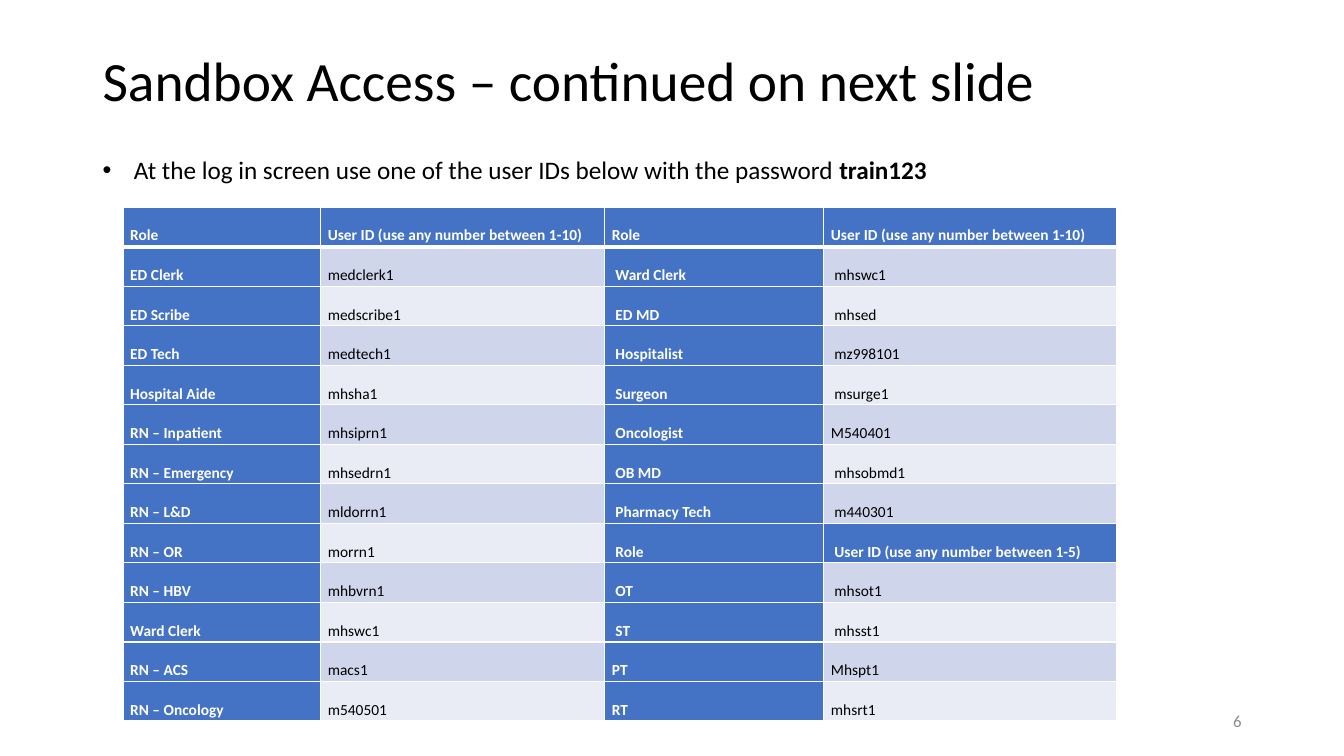
"""Build the Sandbox Access slide with its table of roles and user IDs."""
from typing import NamedTuple

from lxml.etree import SubElement
from pptx import Presentation
from pptx.dml.color import RGBColor
from pptx.enum.text import MSO_ANCHOR, MSO_AUTO_SIZE, PP_ALIGN
from pptx.oxml.ns import qn
from pptx.util import Cm, Pt

FONT = "Calibri"
BLACK, WHITE, GREY = "000000", "FFFFFF", "8C8C8C"
BLUE, BAND_DARK, BAND_LIGHT = "4472C4", "CFD5EA", "E9EBF5"
TEN_USERS = "User ID (use any number between 1-10)"
FIVE_USERS = " User ID (use any number between 1-5)"
COLUMN_WIDTHS = (4.98, 7.16, 5.52, 7.38)
TABLE_HEIGHT = 12.95


class Access(NamedTuple):
    role: str
    user_id: str
    other_role: str
    other_id: str


class Box(NamedTuple):
    left: float
    top: float
    width: float
    height: float


TITLE_BOX = Box(2.33, 0.81, 29.21, 2.59)
BODY_BOX = Box(2.33, 3.76, 22.28, 1.02)
TABLE_BOX = Box(3.1, 5.22, sum(COLUMN_WIDTHS), TABLE_HEIGHT)
NUMBER_BOX = Box(23.92, 17.66, 7.62, 1.01)

ACCESS_ROWS = (
    Access("Role", TEN_USERS, "Role", TEN_USERS),
    Access("ED Clerk", "medclerk1", " Ward Clerk", " mhswc1"),
    Access("ED Scribe", "medscribe1", " ED MD", " mhsed"),
    Access("ED Tech", "medtech1", " Hospitalist", " mz998101"),
    Access("Hospital Aide", "mhsha1", " Surgeon", " msurge1"),
    Access("RN – Inpatient", "mhsiprn1", " Oncologist", "M540401"),
    Access("RN – Emergency", "mhsedrn1", " OB MD", " mhsobmd1"),
    Access("RN – L&D", "mldorrn1", " Pharmacy Tech", " m440301"),
    Access("RN – OR", "morrn1", " Role", FIVE_USERS),
    Access("RN – HBV", "mhbvrn1", " OT", " mhsot1"),
    Access("Ward Clerk", "mhswc1", " ST", " mhsst1"),
    Access("RN – ACS", "macs1", "PT", "Mhspt1"),
    Access("RN – Oncology", "m540501", "RT", "mhsrt1"),
)


def rgb(value: str) -> RGBColor:
    """Turn a hex string into a colour."""
    return RGBColor.from_string(value)


def place(sp, box: Box) -> None:
    """Move and size a shape."""
    sp.left, sp.top, sp.width, sp.height = map(Cm, box)


def add_run(p, text: str, size: float, color: str = BLACK, bold: bool = False) -> None:
    """Append a formatted run to a paragraph."""
    r = p.add_run()
    r.text = text
    r.font.name, r.font.size, r.font.bold = FONT, Pt(size), bold
    r.font.color.rgb = rgb(color)


def add_border(cell, side: str, width: float) -> None:
    """Draw one white border of a table cell."""
    ln = SubElement(cell._tc.get_or_add_tcPr(), qn(f"a:ln{side}"), w=str(Pt(width)))
    fill = SubElement(ln, qn("a:solidFill"))
    SubElement(fill, qn("a:srgbClr"), val=WHITE)


def fill_cell(cell, text: str, row: int, col: int) -> None:
    """Write and colour one table cell."""
    heading = row == 0 or col % 2 == 0 or text == FIVE_USERS
    band = BAND_DARK if row % 2 else BAND_LIGHT
    thick = {"T": row == 1, "B": row == 0}
    for side in "LRTB":
        add_border(cell, side, 3 if thick.get(side) else 1)
    cell.fill.solid()
    cell.fill.fore_color.rgb = rgb(BLUE if heading else band)
    cell.margin_left = cell.margin_right = Cm(0.18)
    cell.margin_top = cell.margin_bottom = Cm(0)
    p = cell.text_frame.paragraphs[0]
    p.line_spacing = 2.0
    add_run(p, text, 11, WHITE if heading else BLACK, heading)


def add_title(slide) -> None:
    """Fill the title placeholder."""
    sp = slide.shapes.title
    place(sp, TITLE_BOX)
    tf = sp.text_frame
    tf.auto_size, tf.vertical_anchor = MSO_AUTO_SIZE.NONE, MSO_ANCHOR.MIDDLE
    p = tf.paragraphs[0]
    p.alignment, p.line_spacing = PP_ALIGN.LEFT, 0.9
    add_run(p, "Sandbox Access – continued on next slide", 39.6)


def add_instruction(slide) -> None:
    """Fill the body placeholder with the login bullet."""
    sp = slide.placeholders[1]
    place(sp, BODY_BOX)
    tf = sp.text_frame
    tf.auto_size = MSO_AUTO_SIZE.NONE
    p = tf.paragraphs[0]
    p.space_before = Pt(0)
    pPr = p._p.get_or_add_pPr()
    pPr.set("marL", str(Cm(0.79)))
    pPr.set("indent", str(-Cm(0.79)))
    SubElement(pPr, qn("a:buFont"), typeface="Arial")
    SubElement(pPr, qn("a:buChar"), char="•")
    add_run(p, "At the log in screen use one of the user IDs below with the password ", 18)
    add_run(p, "train123", 18, bold=True)


def add_access_table(slide) -> None:
    """Add the table of roles and user IDs."""
    table = slide.shapes.add_table(
        len(ACCESS_ROWS), len(COLUMN_WIDTHS), *map(Cm, TABLE_BOX)).table
    for column, width in zip(table.columns, COLUMN_WIDTHS):
        column.width = Cm(width)
    for i, access in enumerate(ACCESS_ROWS):
        table.rows[i].height = Cm(TABLE_HEIGHT / len(ACCESS_ROWS))
        for j, text in enumerate(access):
            fill_cell(table.cell(i, j), text, i, j)


def add_page_number(slide) -> None:
    """Add the page number at the lower right."""
    tf = slide.shapes.add_textbox(*map(Cm, NUMBER_BOX)).text_frame
    tf.word_wrap, tf.vertical_anchor = True, MSO_ANCHOR.MIDDLE
    p = tf.paragraphs[0]
    p.alignment = PP_ALIGN.RIGHT
    add_run(p, "6", 12, GREY)


def main() -> None:
    """Build and save the presentation."""
    prs = Presentation()
    prs.slide_width, prs.slide_height = Cm(33.87), Cm(19.05)
    slide = prs.slides.add_slide(prs.slide_layouts[1])
    add_title(slide)
    add_access_table(slide)
    add_page_number(slide)
    add_instruction(slide)
    prs.save("out.pptx")


if __name__ == "__main__":
    main()
